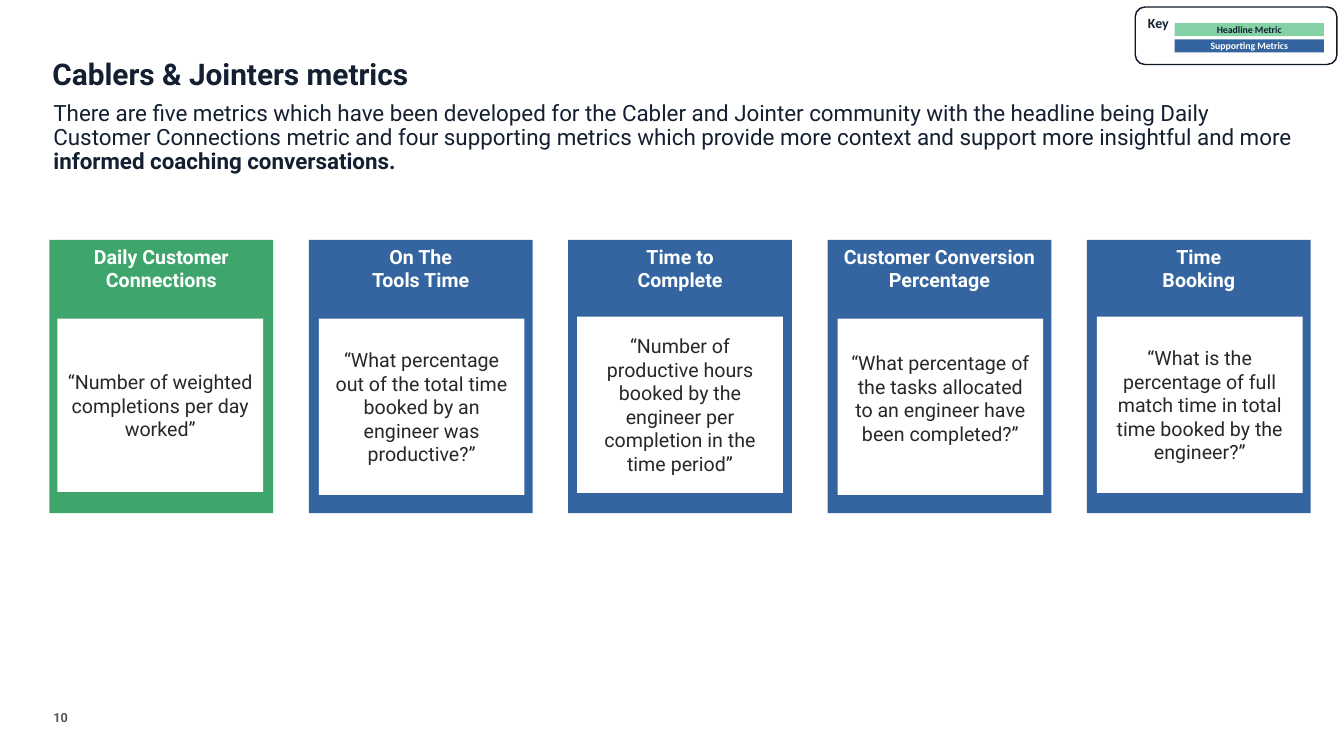
from pptx import Presentation
from pptx.dml.color import RGBColor
from pptx.enum.shapes import MSO_SHAPE as Kind
from pptx.enum.text import MSO_ANCHOR as Anchor, PP_ALIGN as Align
from pptx.util import Inches, Pt

NAVY, BLUE, GREEN, MINT = "142032", "3465A0", "3EA66C", "84D1A6"
WHITE, INK, GREY, EDGE = "FFFFFF", "282828", "51565D", "0F1825"

CARDS = [
    (GREEN, ["Daily Customer", "Connections"],
     "“Number of weighted completions per day worked”", 0.08, 3.16, 1.72, 0.05),
    (BLUE, ["On The", "Tools Time"],
     "“What percentage out of the total time booked by an engineer was productive?”",
     0.1, 3.16, 1.75, 0.05),
    (BLUE, ["Time to", "Complete"],
     "“Number of productive hours booked by the engineer per completion in the time period”",
     0.09, 3.14, 1.75, 0.05),
    (BLUE, ["Customer Conversion Percentage"],
     "“What percentage of the tasks allocated to an engineer have been completed?”",
     0.1, 3.16, 1.75, 0.22),
    (BLUE, ["Time", "Booking"],
     "“What is the percentage of full match time in total time booked by the engineer?”",
     0.1, 3.14, 1.75, 0.05),
]
LEFT, TOP, WIDTH, HEIGHT = 0.49, 2.38, 2.22, 2.71
STEP = (10.78 - LEFT) / (len(CARDS) - 1)
KEYS = [("Headline Metric", MINT, NAVY), ("Supporting Metrics", BLUE, WHITE)]


def tint(code):
    return RGBColor.from_string(code)


class Deck:
    """Holds the text style and the current slide."""

    def __init__(self, slide):
        self.slide = slide
        self.face = "Roboto"

    def text(self, shape, paras, size, color, bold=False, align=Align.LEFT,
             anchor=Anchor.TOP, pad=(0, 0, 0, 0), space=None, wrap=True):
        frame = shape.text_frame
        sides = ("margin_left", "margin_top", "margin_right", "margin_bottom")
        style = dict(zip(sides, map(Inches, pad)))
        style.update(word_wrap=wrap, vertical_anchor=anchor)
        for name, value in style.items():
            setattr(frame, name, value)
        for i, runs in enumerate(paras):
            para = frame.add_paragraph() if i else frame.paragraphs[0]
            para.alignment = align
            para.line_spacing = space
            for j, words in enumerate([runs] if isinstance(runs, str) else runs):
                run = para.add_run()
                run.text = words
                look = {"name": self.face, "size": Pt(size), "bold": bold or j > 0}
                for name, value in look.items():
                    setattr(run.font, name, value)
                run.font.color.rgb = tint(color)

    def title(self, words, area):
        shape = self.slide.shapes.title
        for name, value in zip(("left", "top", "width", "height"), area):
            setattr(shape, name, Inches(value))
        self.text(shape, [words], 21.3, NAVY, bold=True, space=0.9)

    def label(self, paras, area, size, color, **style):
        shape = self.slide.shapes.add_textbox(*map(Inches, area))
        self.text(shape, paras, size, color, **style)

    def group(self):
        return self.slide.shapes.add_group_shape()

    def box(self, group, area, paras, size, color, fill=None, line=None,
            kind=Kind.RECTANGLE, pad=(0.1, 0.05, 0.1, 0.05), **style):
        shape = group.shapes.add_shape(kind, *map(Inches, area))
        shape.shadow.inherit = False
        if fill:
            shape.fill.solid()
            shape.fill.fore_color.rgb = tint(fill)
        else:
            shape.fill.background()
        if line:
            shape.line.color.rgb = tint(line)
            shape.line.width = Pt(1)
        else:
            shape.line.fill.background()
        self.text(shape, paras, size, color, pad=pad, **style)

    def card(self, left, fill, head, quote, shift, top, height, base):
        group = self.group()
        self.box(group, (left, TOP, WIDTH, HEIGHT), head, 14, WHITE, fill,
                 bold=True, align=Align.CENTER)
        self.box(group, (left + shift, top, 2.04, height), [quote], 14, INK, WHITE,
                 pad=(0.1, 0.05, 0.1, base), align=Align.CENTER, anchor=Anchor.MIDDLE)

    def legend(self):
        self.face = "Calibri"
        group = self.group()
        self.box(group, (11.26, 0.07, 2, 0.57), ["Key"], 10, NAVY, line=EDGE,
                 kind=Kind.ROUNDED_RECTANGLE, bold=True)
        for i, (words, fill, color) in enumerate(KEYS):
            self.box(group, (11.65, 0.23 + 0.16 * i, 1.48, 0.13), [words], 7, color,
                     fill, pad=(0, 0.05, 0, 0.05), bold=True,
                     align=Align.CENTER, anchor=Anchor.MIDDLE)


def main():
    show = Presentation()
    show.slide_width, show.slide_height = Inches(13.33), Inches(7.5)
    deck = Deck(show.slides.add_slide(show.slide_layouts[5]))
    deck.label(["10"], (0.53, 7.04, 0.17, 0.15), 9, GREY, bold=True, wrap=False)
    deck.title("Cablers & Jointers metrics", (0.52, 0.59, 4.83, 0.42))
    deck.label([(
        "There are five metrics which have been developed for the Cabler and Jointer "
        "community with the headline being Daily Customer Connections metric and four "
        "supporting metrics which provide more context and support more insightful and more ",
        "informed coaching conversations.",
    )], (0.53, 1.01, 12.48, 0.64), 16, NAVY, space=0.9)
    for i, card in enumerate(CARDS):
        deck.card(LEFT + STEP * i, *card)
    deck.legend()
    show.save("out.pptx")


if __name__ == "__main__":
    main()
